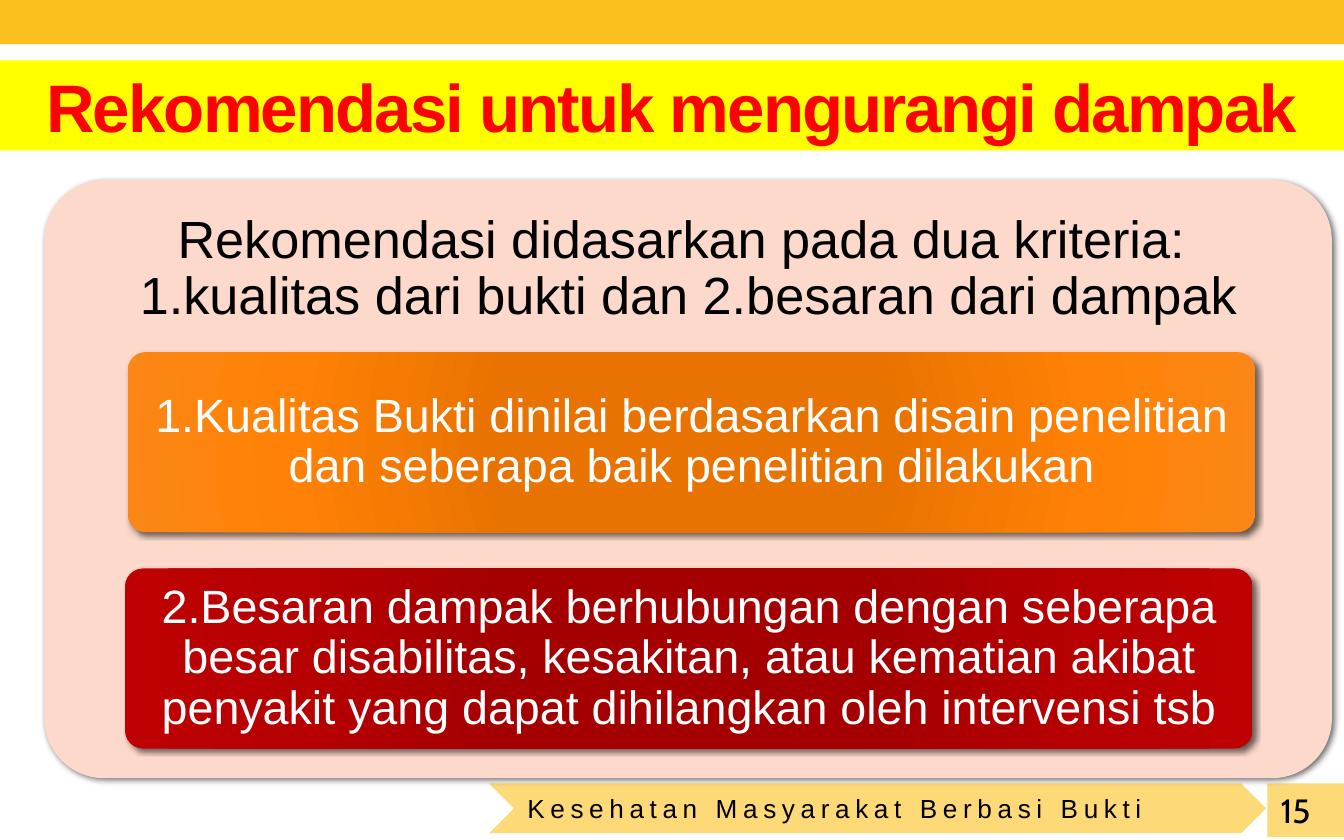
from dataclasses import dataclass
from typing import Optional

from pptx import Presentation
from pptx import oxml
from pptx import util as u
from pptx.dml import color
from pptx.enum import shapes, text
from pptx.oxml import ns


@dataclass(frozen=True)
class Theme:
    gold: str = "FBC01E"
    pale_gold: str = "FDD978"
    yellow: str = "FFFF00"
    red: str = "FF0000"
    pink: str = "FDD9CC"
    black: str = "000000"
    white: str = "FFFFFF"
    orange_stops: tuple = ("E97300", "E97300", "FF8105", "FA8716")
    crimson_stops: tuple = ("A40002", "A40002", "B70002", "BE0204")
    stop_positions: tuple = (0, 34, 70, 100)
    body_font: str = "Arial"
    number_font: str = "Cabin"
    title_size: int = 36
    lead_size: int = 28
    card_size: int = 25
    number_size: int = 18
    footer_size: int = 14


THEME = Theme()


@dataclass(frozen=True)
class Box:
    left: float
    top: float
    width: float
    height: float


@dataclass(frozen=True)
class TextStyle:
    size: int
    color: str
    font: str = THEME.body_font
    bold: bool = False
    tracking: int = 0
    align: text.PP_ALIGN = text.PP_ALIGN.CENTER
    anchor: text.MSO_ANCHOR = text.MSO_ANCHOR.MIDDLE
    line_spacing: float = 1.0
    inset_x: float = 0.1
    inset_y: float = 0.05


@dataclass(frozen=True)
class Card:
    box: Box
    stops: tuple
    words: str


def write(shape, words: str, style: TextStyle) -> None:
    frame = shape.text_frame
    frame_format = {
        "word_wrap": True,
        "vertical_anchor": style.anchor,
        "margin_left": u.Inches(style.inset_x),
        "margin_right": u.Inches(style.inset_x),
        "margin_top": u.Inches(style.inset_y),
        "margin_bottom": u.Inches(style.inset_y),
    }
    for name, value in frame_format.items():
        setattr(frame, name, value)
    paragraph = frame.paragraphs[0]
    paragraph.text = words
    paragraph.alignment = style.align
    paragraph.line_spacing = style.line_spacing
    font_format = {"name": style.font, "size": u.Pt(style.size), "bold": style.bold}
    for run in paragraph.runs:
        for name, value in font_format.items():
            setattr(run.font, name, value)
        run.font.color.rgb = color.RGBColor.from_string(style.color)
        if style.tracking:
            run.font._element.set("spc", str(style.tracking * 100))


def add_block(slide, kind, box: Box, fill: Optional[str] = None):
    shape = slide.shapes.add_shape(
        kind, *map(u.Inches, (box.left, box.top, box.width, box.height)))
    shape.shadow.inherit = False
    shape.line.fill.background()
    if fill:
        shape.fill.solid()
        shape.fill.fore_color.rgb = color.RGBColor.from_string(fill)
    else:
        shape.fill.background()
    return shape


def add_rounded(slide, box: Box, fill: Optional[str] = None):
    shape = add_block(slide, shapes.MSO_SHAPE.ROUNDED_RECTANGLE, box, fill)
    shape.adjustments[0] = 0.1
    effects = shape._element.spPr.find(ns.qn("a:effectLst"))
    effects.append(oxml.parse_xml(
        f'<a:outerShdw {ns.nsdecls("a")} blurRad="{u.Pt(3)}" dist="{u.Pt(2)}" '
        f'dir="2700000" rotWithShape="0"><a:srgbClr val="{THEME.black}">'
        '<a:alpha val="60000"/></a:srgbClr></a:outerShdw>'))
    return shape


def radial_fill(shape, colors: tuple) -> None:
    stops = "".join(
        f'<a:gs pos="{position * 1000}"><a:srgbClr val="{value}"/></a:gs>'
        for position, value in zip(THEME.stop_positions, colors))
    gradient = oxml.parse_xml(
        f'<a:gradFill {ns.nsdecls("a")} rotWithShape="1"><a:gsLst>{stops}</a:gsLst>'
        '<a:path path="circle"><a:fillToRect l="100000" t="100000" r="100000" '
        'b="100000"/></a:path></a:gradFill>')
    properties = shape._element.spPr
    properties.replace(properties.find(ns.qn("a:noFill")), gradient)


def add_card(slide, card: Card) -> None:
    shape = add_rounded(slide, card.box)
    radial_fill(shape, card.stops)
    write(shape, card.words, TextStyle(
        THEME.card_size, THEME.white, line_spacing=0.9, inset_x=0.07))


def main() -> None:
    presentation = Presentation()
    presentation.slide_width = u.Inches(10)
    presentation.slide_height = u.Inches(6.25)
    slide = presentation.slides.add_slide(presentation.slide_layouts[6])
    rectangle = shapes.MSO_SHAPE.RECTANGLE

    # Top band and title
    add_block(slide, rectangle, Box(0, 0, 10, 0.33), THEME.gold)
    title = add_block(slide, rectangle, Box(0, 0.45, 10, 0.67), THEME.yellow)
    write(title, "Rekomendasi untuk mengurangi dampak",
          TextStyle(THEME.title_size, THEME.red, bold=True, tracking=-1))

    # Footer: page number and chevron
    number = add_block(slide, rectangle, Box(9.43, 5.83, 0.57, 0.4), THEME.pale_gold)
    write(number, "15", TextStyle(
        THEME.number_size, THEME.black, THEME.number_font,
        align=text.PP_ALIGN.LEFT, anchor=text.MSO_ANCHOR.TOP))
    footer = add_block(slide, shapes.MSO_SHAPE.CHEVRON,
                       Box(3.64, 5.83, 5.78, 0.37), THEME.pale_gold)
    write(footer, "Kesehatan Masyarakat Berbasi Bukti", TextStyle(
        THEME.footer_size, THEME.black, tracking=3, align=text.PP_ALIGN.JUSTIFY))

    # Panel with its lead text
    add_rounded(slide, Box(0.33, 1.34, 9.58, 4.45), THEME.pink)
    lead = slide.shapes.add_textbox(*map(u.Inches, (0.33, 1.34, 9.58, 1.33)))
    write(lead, "Rekomendasi didasarkan pada dua kriteria: \n"
                "1.kualitas dari bukti dan 2.besaran dari dampak",
          TextStyle(THEME.lead_size, THEME.black, line_spacing=0.9,
                    inset_x=0.12, inset_y=0.12))

    # Criteria cards
    cards = (
        Card(Box(0.95, 2.62, 8.39, 1.34), THEME.orange_stops,
             "1.Kualitas Bukti dinilai berdasarkan disain penelitian "
             "dan seberapa baik penelitian dilakukan"),
        Card(Box(0.93, 4.23, 8.39, 1.34), THEME.crimson_stops,
             "2.Besaran dampak berhubungan dengan seberapa besar disabilitas, "
             "kesakitan, atau kematian akibat penyakit yang dapat dihilangkan "
             "oleh intervensi tsb"),
    )
    for card in cards:
        add_card(slide, card)

    presentation.save("out.pptx")


if __name__ == "__main__":
    main()
